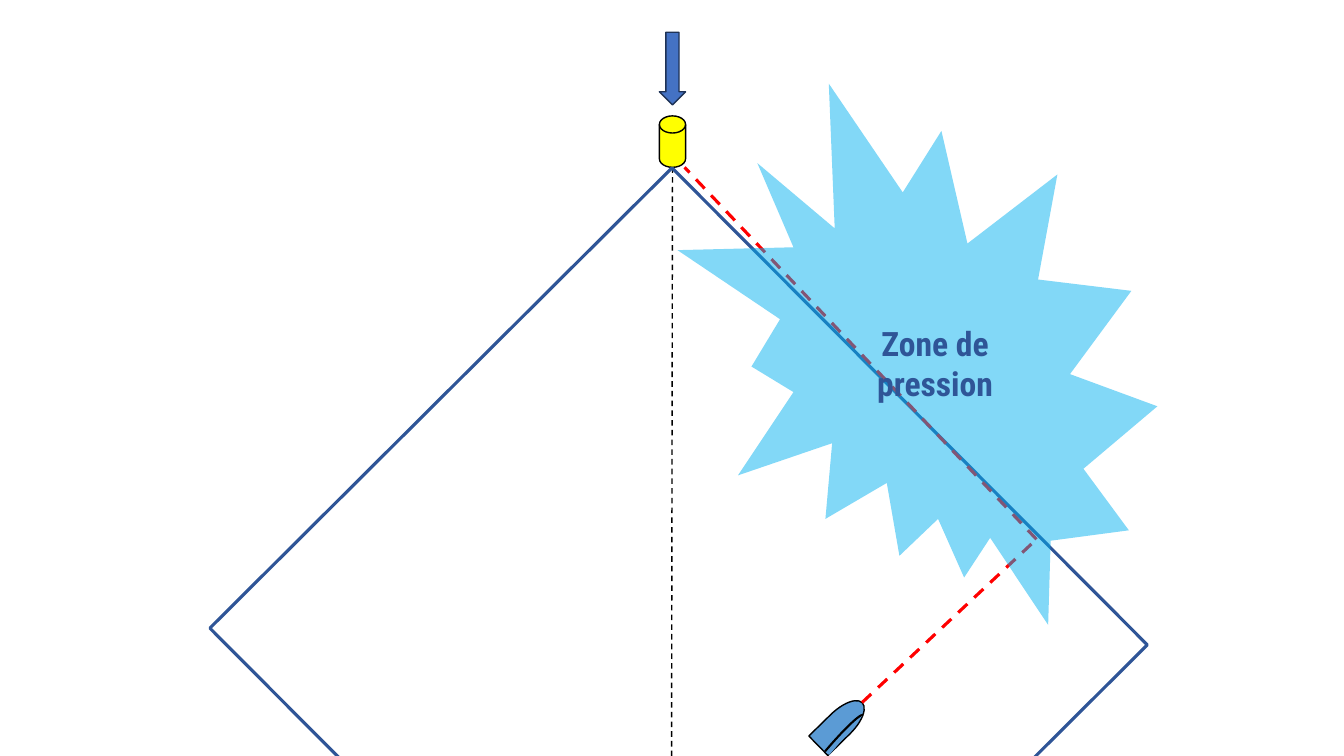
"""Builds the slide showing a boat's path through the pressure zone beside the windward mark."""
import lxml.etree
import pptx
import pptx.dml.color
import pptx.enum.dml
import pptx.enum.shapes
import pptx.enum.text
import pptx.oxml.ns
import pptx.util

Inches = pptx.util.Inches
RGBColor = pptx.dml.color.RGBColor
Preset = pptx.enum.shapes.MSO_SHAPE
qn = pptx.oxml.ns.qn

BLACK = RGBColor(0x00, 0x00, 0x00)
RED = RGBColor(0xFF, 0x00, 0x00)
BUOY_YELLOW = RGBColor(0xFF, 0xFF, 0x00)
WIND_BLUE = RGBColor(0x44, 0x72, 0xC4)
WIND_OUTLINE = RGBColor(0x1E, 0x32, 0x56)
COURSE_BLUE = RGBColor(0x2F, 0x55, 0x97)
HULL_BLUE = RGBColor(0x5B, 0x9B, 0xD5)
ZONE_BLUE = RGBColor(0x00, 0xB0, 0xF0)


def add_figure(preset, left, top, width, height, fill=None, line=None, weight=1, rotation=0, flipped=False):
    shape = slide.shapes.add_shape(preset, Inches(left), Inches(top), Inches(width), Inches(height))
    shape.shadow.inherit = False
    shape.rotation = rotation
    if flipped:
        shape._element.spPr.find(qn("a:xfrm")).set("flipH", "1")
    if fill is None:
        shape.fill.background()
    else:
        shape.fill.solid()
        shape.fill.fore_color.rgb = fill
    if line is None:
        shape.line.fill.background()
    else:
        shape.line.color.rgb = line
        shape.line.width = pptx.util.Pt(weight)
    return shape


def add_dashed_line(start, end, color, weight):
    connector = slide.shapes.add_connector(
        pptx.enum.shapes.MSO_CONNECTOR.STRAIGHT, *map(Inches, start + end))
    connector.line.color.rgb = color
    connector.line.width = pptx.util.Pt(weight)
    connector.line.dash_style = pptx.enum.dml.MSO_LINE.DASH
    lxml.etree.SubElement(connector._element.spPr, qn("a:effectLst"))


presentation = pptx.Presentation()
presentation.slide_width = Inches(13.33)
presentation.slide_height = Inches(7.5)
slide = presentation.slides.add_slide(presentation.slide_layouts[6])

add_figure(Preset.FLOWCHART_MAGNETIC_DISK, 6.54, 1.15, 0.26, 0.51, BUOY_YELLOW, BLACK)
add_dashed_line((6.67, 1.66), (6.66, 8.01), BLACK, 1)
add_figure(Preset.DOWN_ARROW, 6.54, 0.32, 0.26, 0.72, WIND_BLUE, WIND_OUTLINE)
add_figure(Preset.RECTANGLE, 3.39, 3.08, 6.68, 6.47, None, COURSE_BLUE, 2.25, 45.1)

add_figure(Preset.FLOWCHART_DELAY, 8.03, 7.05, 0.61, 0.27, HULL_BLUE, BLACK, 1, 315.6)
add_figure(Preset.ARC, 8.17, 6.97, 0.11, 1.04, HULL_BLUE, BLACK, 1.5, 40.3, True)

boat, tack, mark = (8.55, 6.97), (10.28, 5.35), (6.79, 1.66)
for start, end in ((boat, tack), (tack, mark)):
    add_dashed_line(start, end, RED, 2.25)

zone = add_figure(Preset.EXPLOSION2, 6.72, 0.83, 4.76, 5.37, ZONE_BLUE, flipped=True)
zone_color = zone._element.spPr.find(qn("a:solidFill")).find(qn("a:srgbClr"))
lxml.etree.SubElement(zone_color, qn("a:alpha")).set("val", "49000")
zone.text_frame.word_wrap = True
zone.text_frame.vertical_anchor = pptx.enum.text.MSO_ANCHOR.MIDDLE
paragraph = zone.text_frame.paragraphs[0]
paragraph.text = "Zone de pression"
paragraph.alignment = pptx.enum.text.PP_ALIGN.CENTER
paragraph.font.name = "Roboto Condensed"
paragraph.font.size = pptx.util.Pt(24)
paragraph.font.bold = True
paragraph.font.color.rgb = COURSE_BLUE

presentation.save("out.pptx")
